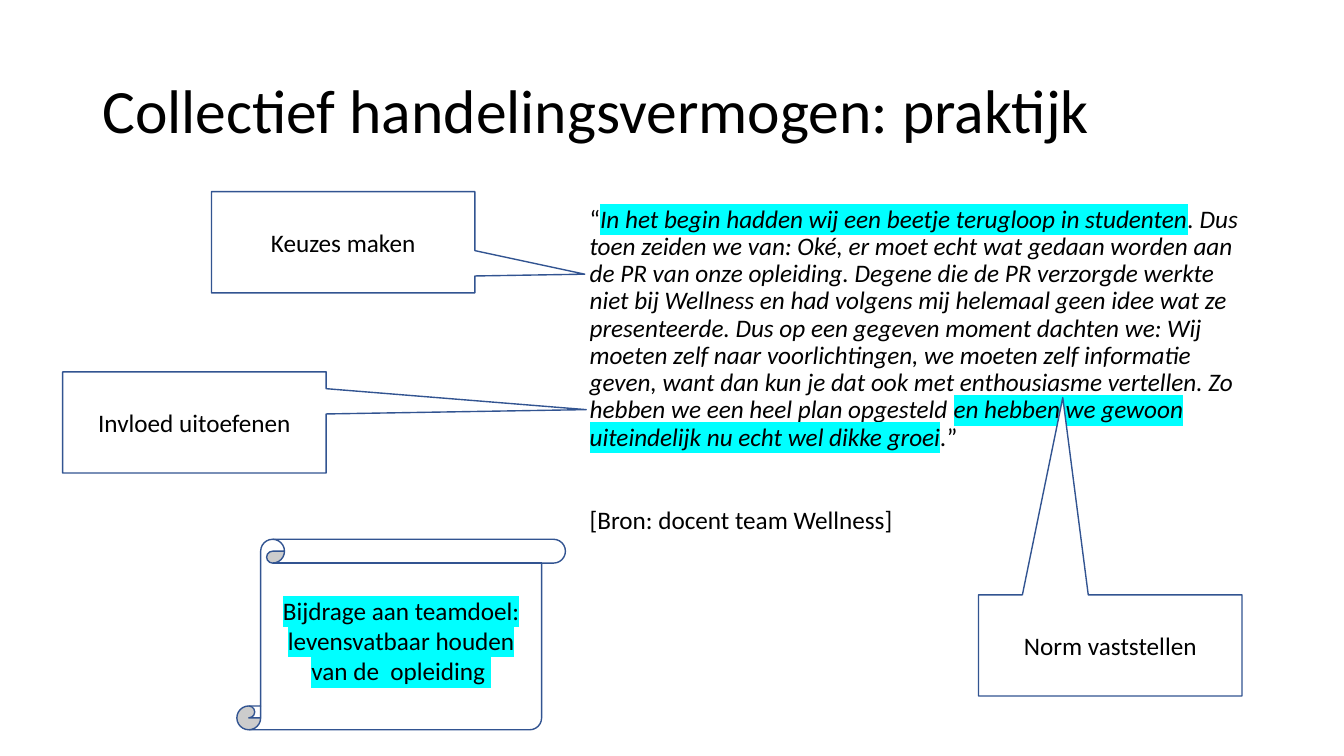
from lxml import etree
from pptx import Presentation
from pptx.dml.color import RGBColor
from pptx.enum.shapes import MSO_SHAPE
from pptx.enum.text import MSO_ANCHOR, PP_ALIGN
from pptx.oxml.ns import qn
from pptx.util import Cm, Pt

CALLOUT = MSO_SHAPE.RECTANGULAR_CALLOUT
SCROLL = MSO_SHAPE.VERTICAL_SCROLL
MIDDLE = MSO_ANCHOR.MIDDLE
CENTER = PP_ALIGN.CENTER
BLACK, WHITE, BLUE, CYAN = "000000", "FFFFFF", "325491", "00FFFF"


def color(hex_value):
    return RGBColor.from_string(hex_value)


def add_run(paragraph, text, size=18, italic=False, highlighted=False):
    paragraph.font.name = "Calibri"
    paragraph.font.size = Pt(size)
    paragraph.font.color.rgb = color(BLACK)
    run = paragraph.add_run()
    run.text = text
    if italic:
        run.font.italic = True
    if highlighted:
        highlight = etree.SubElement(run.font._element, qn("a:highlight"))
        etree.SubElement(highlight, qn("a:srgbClr"), val=CYAN)


presentation = Presentation()
presentation.slide_width = Cm(33.87)
presentation.slide_height = Cm(19.05)
slide = presentation.slides.add_slide(presentation.slide_layouts[6])

title = slide.shapes.add_textbox(Cm(2.33), Cm(1.01), Cm(29.21), Cm(3.68))
title.text_frame.word_wrap = True
title.text_frame.vertical_anchor = MIDDLE
title_paragraph = title.text_frame.paragraphs[0]
title_paragraph.line_spacing = 0.9
add_run(title_paragraph, "Collectief handelingsvermogen: praktijk", size=44)

body = slide.shapes.add_textbox(Cm(14.61), Cm(5.08), Cm(16.93), Cm(12.09))
body.text_frame.word_wrap = True
quote = body.text_frame.paragraphs[0]
quote.line_spacing = 0.9
quote.space_before = Pt(10)
quote_parts = [
    ("“", False, False),
    ("In het begin hadden wij een beetje terugloop in studenten", True, True),
    (". Dus toen zeiden we van: Oké, er moet echt wat gedaan worden aan de PR "
     "van onze opleiding. Degene die de PR verzorgde werkte niet bij Wellness "
     "en had volgens mij helemaal geen idee wat ze presenteerde. Dus op een "
     "gegeven moment dachten we: Wij moeten zelf naar voorlichtingen, we moeten "
     "zelf informatie geven, want dan kun je dat ook met enthousiasme vertellen. "
     "Zo hebben we een heel plan opgesteld ", True, False),
    ("en hebben we gewoon uiteindelijk nu echt wel dikke groei", True, True),
    (".", True, False),
    ("”", False, False),
]
for text, italic, highlighted in quote_parts:
    add_run(quote, text, italic=italic, highlighted=highlighted)

source = body.text_frame.add_paragraph()
source.line_spacing = 0.9
source.space_before = Pt(40)
add_run(source, "[Bron: docent team Wellness]")

labels = [
    (CALLOUT, 1.58, 9.37, 6.64, 2.55, (1.487, -0.126), "Invloed uitoefenen"),
    (CALLOUT, 24.66, 14.99, 6.64, 2.55, (-0.18, -2.449), "Norm vaststellen"),
    (CALLOUT, 5.33, 4.83, 6.64, 2.55, (0.917, 0.316), "Keuzes maken"),
    (SCROLL, 5.97, 13.59, 8.28, 4.8, (),
     "Bijdrage aan teamdoel: levensvatbaar houden van de  opleiding "),
]
for kind, left, top, width, height, adjustments, text in labels:
    shape = slide.shapes.add_shape(kind, Cm(left), Cm(top), Cm(width), Cm(height))
    for index, value in enumerate(adjustments):
        shape.adjustments[index] = value
    shape.shadow.inherit = False
    shape.fill.solid()
    shape.fill.fore_color.rgb = color(WHITE)
    shape.line.color.rgb = color(BLUE)
    shape.line.width = Pt(1)
    shape.text_frame.word_wrap = True
    shape.text_frame.vertical_anchor = MIDDLE
    paragraph = shape.text_frame.paragraphs[0]
    paragraph.alignment = CENTER
    add_run(paragraph, text, highlighted=kind == SCROLL)

presentation.save("out.pptx")
